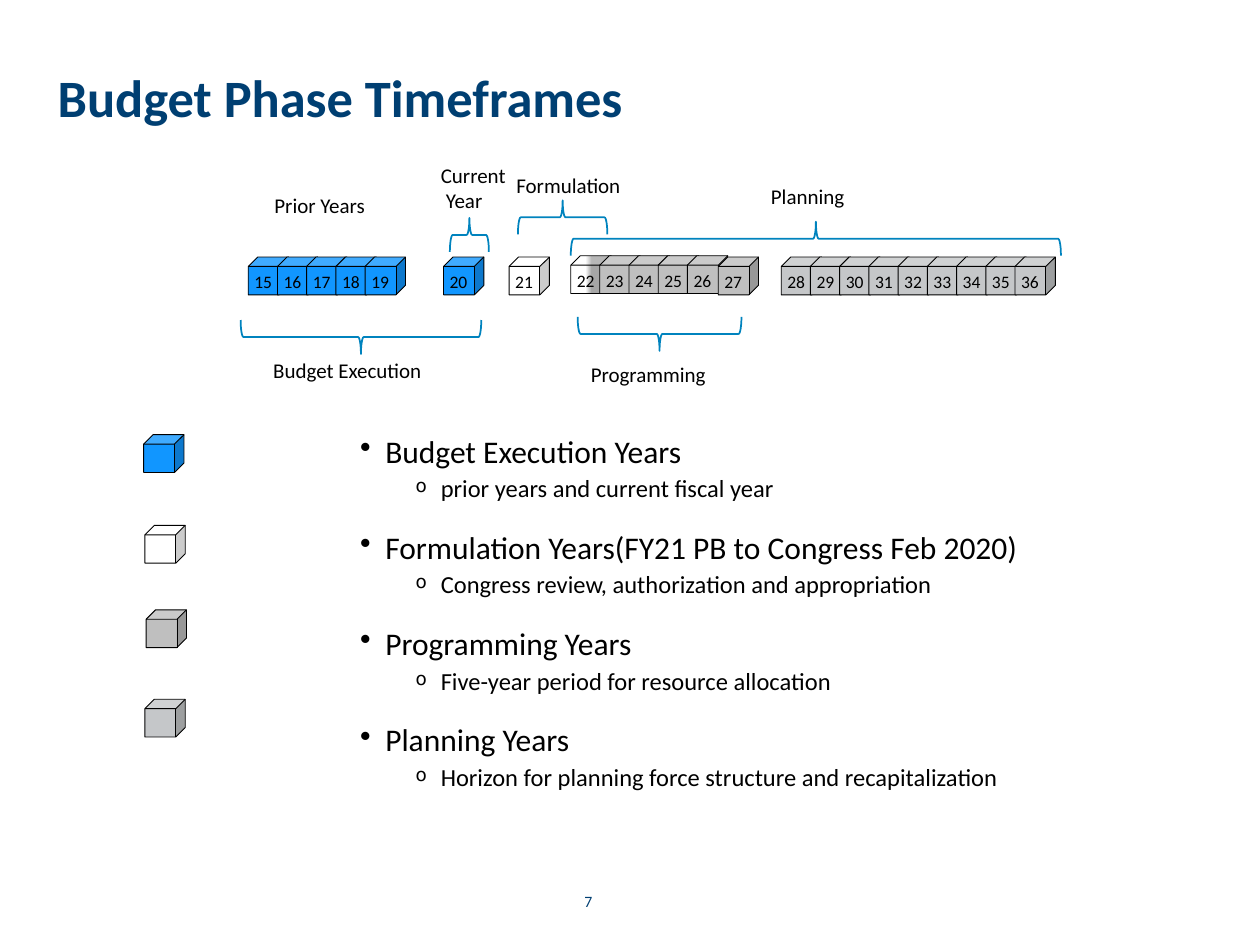
from pptx import Presentation
from pptx.dml.color import RGBColor
from pptx.enum.shapes import MSO_SHAPE
from pptx.enum.text import MSO_ANCHOR, MSO_AUTO_SIZE, PP_ALIGN
from pptx.oxml.ns import qn
from pptx.util import Inches, Pt
from lxml.etree import SubElement

NAVY = RGBColor(0x00, 0x3F, 0x72)
TEAL = RGBColor(0x00, 0x83, 0xBE)
BLUE = RGBColor(0x11, 0x96, 0xFF)
BLACK = RGBColor(0, 0, 0)
WHITE = RGBColor(0xFF, 0xFF, 0xFF)
DARK = RGBColor(0xA6, 0xA6, 0xA6)
GRAY = RGBColor(0xBF, 0xBF, 0xBF)
PALE = RGBColor(0xC5, 0xC7, 0xC9)

deck = Presentation()
deck.slide_width, deck.slide_height = Inches(10), Inches(7.5)
COL = deck.slide_width / 100
ROW = deck.slide_height / 75
slide = deck.slides.add_slide(deck.slide_layouts[6])


def add_text(x, y, w, h, lines, size, color=BLACK, wrap=False):
    box = slide.shapes.add_textbox(int(x * COL), int(y * ROW), int(w * COL), int(h * ROW))
    frame = box.text_frame
    frame.text = "\n".join(lines)
    frame.word_wrap = wrap
    frame.auto_size = MSO_AUTO_SIZE.NONE if wrap else MSO_AUTO_SIZE.SHAPE_TO_FIT_TEXT
    for para in frame.paragraphs:
        para.font.name = "Calibri"
        para.font.size = Pt(size)
        para.font.color.rgb = color
    return frame


def add_form(kind, x, y, w, h, edge, weight):
    form = slide.shapes.add_shape(kind, int(x * COL), int(y * ROW), int(w * COL), int(h * ROW))
    form.shadow.inherit = False
    form.line.color.rgb = edge
    form.line.width = Pt(weight)
    form.fill.background()
    return form


title = add_text(3.5, 3.7, 79.7, 8.5, ["Budget Phase Timeframes"], 30, NAVY, True)
title.vertical_anchor = MSO_ANCHOR.MIDDLE
head = title.paragraphs[0]
head.font.bold = True
head.line_spacing = 0.9
head._p.get_or_add_pPr().set("marL", str(Inches(0.01)))

page = add_text(43.9, 69.5, 5.6, 4, ["7"], 9, NAVY, True)
page.vertical_anchor = MSO_ANCHOR.MIDDLE
page.paragraphs[0].alignment = PP_ALIGN.CENTER

topics = [
    ("Budget Execution Years", "prior years and current fiscal year"),
    ("Formulation Years(FY21 PB to Congress Feb 2020)",
     "Congress review, authorization and appropriation"),
    ("Programming Years", "Five-year period for resource allocation"),
    ("Planning Years", "Horizon for planning force structure and recapitalization"),
]
body = add_text(27.6, 34.1, 72.4, 30.1, [line for pair in topics for line in pair], 18, BLACK, True)
for i, para in enumerate(body.paragraphs):
    sub = i % 2
    props = para._p.get_or_add_pPr()
    props.set("marL", str(Inches(0.64 if sub else 0.2)))
    props.set("indent", str(Inches(-0.2)))
    for old in props.findall(qn("a:defRPr")):
        props.remove(old)
    if sub:
        SubElement(props, qn("a:buSzPct")).set("val", "75000")
    SubElement(props, qn("a:buChar")).set("char", "o" if sub else "•")
    para.level = sub
    para.line_spacing = 0.9
    if i:
        para.space_before = Pt(3.8 if sub else 16.6)
    para.font.name = "Calibri"
    para.font.size = Pt(14 if sub else 18)
    para.font.color.rgb = BLACK

groups = [
    (15, 5, 19.7, 20.4, BLUE),
    (20, 1, 35.2, 20.4, BLUE),
    (21, 1, 40.4, 20.4, WHITE),
    (22, 1, 45.3, 20.3, None),
    (23, 4, 47.6, 20.3, GRAY),
    (27, 1, 57, 20.4, GRAY),
    (28, 9, 62, 20.4, PALE),
]
cubes = [(str(year + i), x + 2.32 * i, y, fill)
         for year, count, x, y, fill in groups for i in range(count)]
keys = [("", 11.4, 34.5, BLUE), ("", 11.5, 41.7, WHITE),
        ("", 11.6, 48.4, GRAY), ("", 11.5, 55.5, PALE)]
for name, x, y, fill in cubes + keys:
    cube = add_form(MSO_SHAPE.CUBE, x, y, 3.2, 3, BLACK, 0.5)
    if fill is None:
        cube.fill.gradient()
        cube.fill.gradient_angle = 0
        for stop, place, tone in zip(cube.fill.gradient_stops, (0.37, 0.52), (WHITE, DARK)):
            stop.position = place
            stop.color.rgb = tone
    else:
        cube.fill.solid()
        cube.fill.fore_color.rgb = fill
for name, x, y, fill in cubes:
    add_text(x - 0.5, y + 0.6, 3.5, 2.7, [name], 10)

braces = [
    (52.35, 26.5, 13, 270),
    (64.75, 18.95, 38.9, 90),
    (44.65, 17.25, 7.1, 90),
    (37.25, 18.65, 3.1, 90),
    (28.65, 26.75, 19.1, 270),
]
for x, y, span, turn in braces:
    brace = add_form(MSO_SHAPE.LEFT_BRACE, x - 1.35, y - span / 2, 2.7, span, TEAL, 1)
    brace.rotation = turn

labels = [
    (20.8, 14.8, 9.3, "Prior Years"),
    (60.2, 14.1, 7.9, "Planning"),
    (45.9, 28.2, 11.2, "Programming"),
    (40, 13.2, 10.4, "Formulation"),
    (20.7, 27.9, 13.9, "Budget Execution"),
]
for x, y, w, name in labels:
    add_text(x, y, w, 3, [name], 12)
now = add_text(34, 12.4, 7.2, 5, ["Current", "Year"], 12)
now.paragraphs[1]._p.get_or_add_pPr().set("marL", str(Inches(0.04)))

deck.save("out.pptx")
